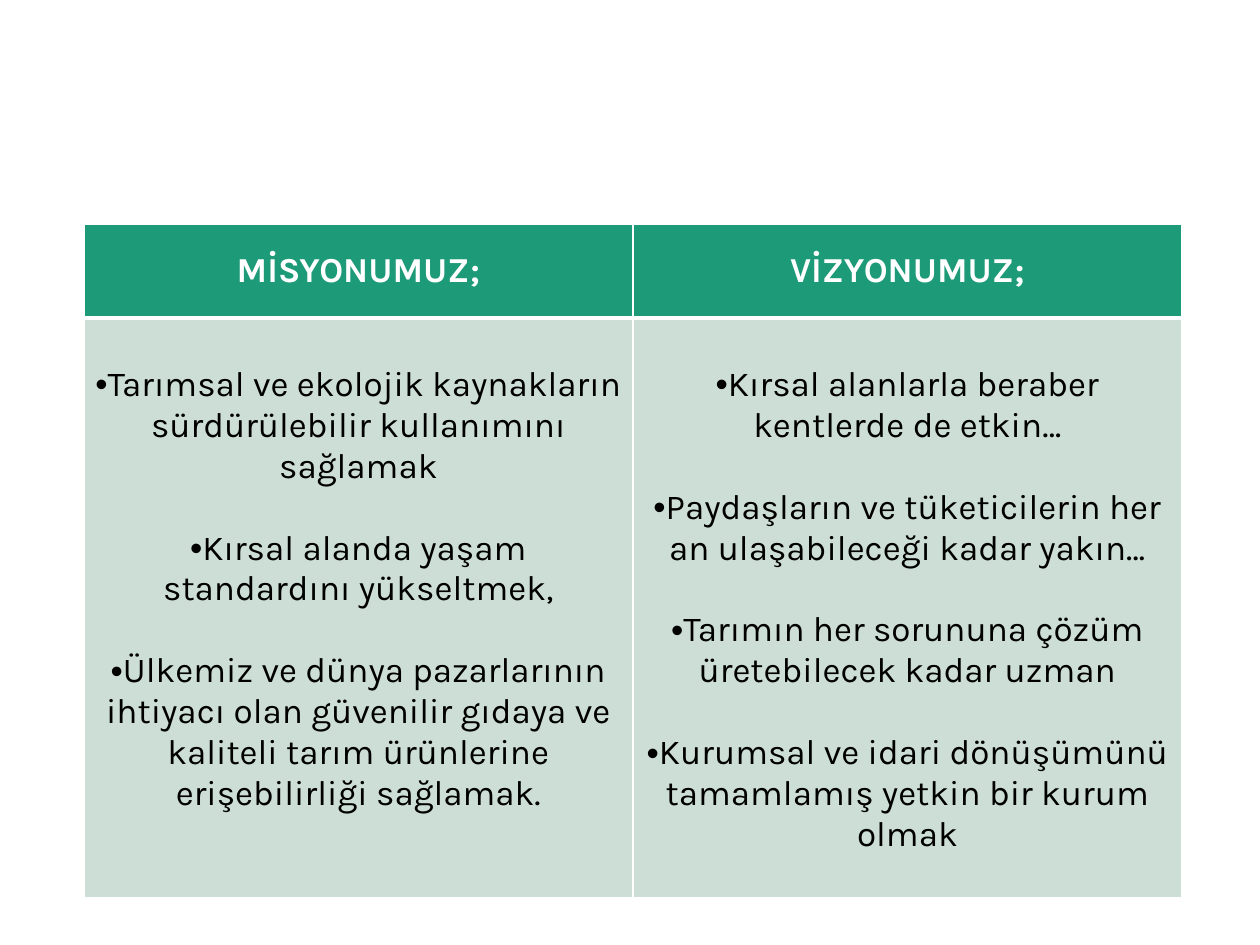
"""Build a slide with a two-column table of mission and vision."""
from lxml import etree
from pptx import Presentation, util as u
from pptx.dml.color import RGBColor
from pptx.enum import text
from pptx.oxml.ns import qn

COLS = [
    ("MİSYONUMUZ;", [
        "Tarımsal ve ekolojik kaynakların sürdürülebilir kullanımını sağlamak",
        "Kırsal alanda yaşam standardını yükseltmek,",
        "Ülkemiz ve dünya pazarlarının ihtiyacı olan güvenilir gıdaya ve "
        "kaliteli tarım ürünlerine erişebilirliği sağlamak.",
    ]),
    ("VİZYONUMUZ;", [
        "Kırsal alanlarla beraber kentlerde de etkin…",
        "Paydaşların ve tüketicilerin her an ulaşabileceği kadar yakın…",
        "Tarımın her sorununa çözüm üretebilecek kadar uzman",
        "Kurumsal ve idari dönüşümünü tamamlamış yetkin bir kurum olmak",
    ]),
]
HEX = {"head": "1D9A78", "body": "CDDED6", "white": "FFFFFF", "ink": "000000"}
FONT, SIZE = "Karla", 20
LEFT, TOP, WIDE = 84, 224, 549
ROWS = (94, 580)
PAD_X, PAD_Y, GAP = 10, 5, 41


def px(n):
    return u.Emu(n * 914400 // 126)


def edge(cell, tops, ends):
    props = cell._tc.get_or_add_tcPr()
    widths = {"lnL": 1, "lnR": 1, "lnT": tops, "lnB": ends}
    for i, (tag, pt) in enumerate(widths.items()):
        line = etree.Element(qn("a:" + tag), w=str(u.Pt(pt)))
        fill = etree.SubElement(line, qn("a:solidFill"))
        etree.SubElement(fill, qn("a:srgbClr"), val=HEX["white"])
        props.insert(i, line)


def bullet(para):
    props = para._p.get_or_add_pPr()
    props.set("marL", "0")
    props.set("indent", "0")
    etree.SubElement(props, qn("a:buFont"), typeface="Arial")
    etree.SubElement(props, qn("a:buChar"), char="•")


def fill(cell, lines, back, ink, bold):
    cell.fill.solid()
    cell.fill.fore_color.rgb = RGBColor.from_string(HEX[back])
    cell.margin_left = cell.margin_right = px(PAD_X)
    cell.margin_top = cell.margin_bottom = px(PAD_Y)
    cell.text_frame.text = "\n".join(lines)
    for para in cell.text_frame.paragraphs:
        para.alignment = text.PP_ALIGN.CENTER
        font = para.runs[0].font
        font.name, font.size, font.bold = FONT, u.Pt(SIZE), bold
        font.color.rgb = RGBColor.from_string(HEX[ink])


def main():
    deck = Presentation()
    deck.slide_width, deck.slide_height = px(1260), px(945)
    slide = deck.slides.add_slide(deck.slide_layouts[6])
    table = slide.shapes.add_table(
        2, len(COLS), px(LEFT), px(TOP), px(WIDE * len(COLS)), px(sum(ROWS))).table
    for row, high in zip(table.rows, ROWS):
        row.height = px(high)
    for i, (title, goals) in enumerate(COLS):
        table.columns[i].width = px(WIDE)
        head, body = table.cell(0, i), table.cell(1, i)
        fill(head, [title], "head", "white", True)
        head.vertical_anchor = text.MSO_ANCHOR.MIDDLE
        edge(head, 1, 3)
        fill(body, goals, "body", "ink", False)
        body.margin_top = px(PAD_Y + GAP)
        edge(body, 3, 1)
        for j, para in enumerate(body.text_frame.paragraphs):
            if j:
                para.space_before = px(GAP)
            bullet(para)
    deck.save("out.pptx")


if __name__ == "__main__":
    main()
